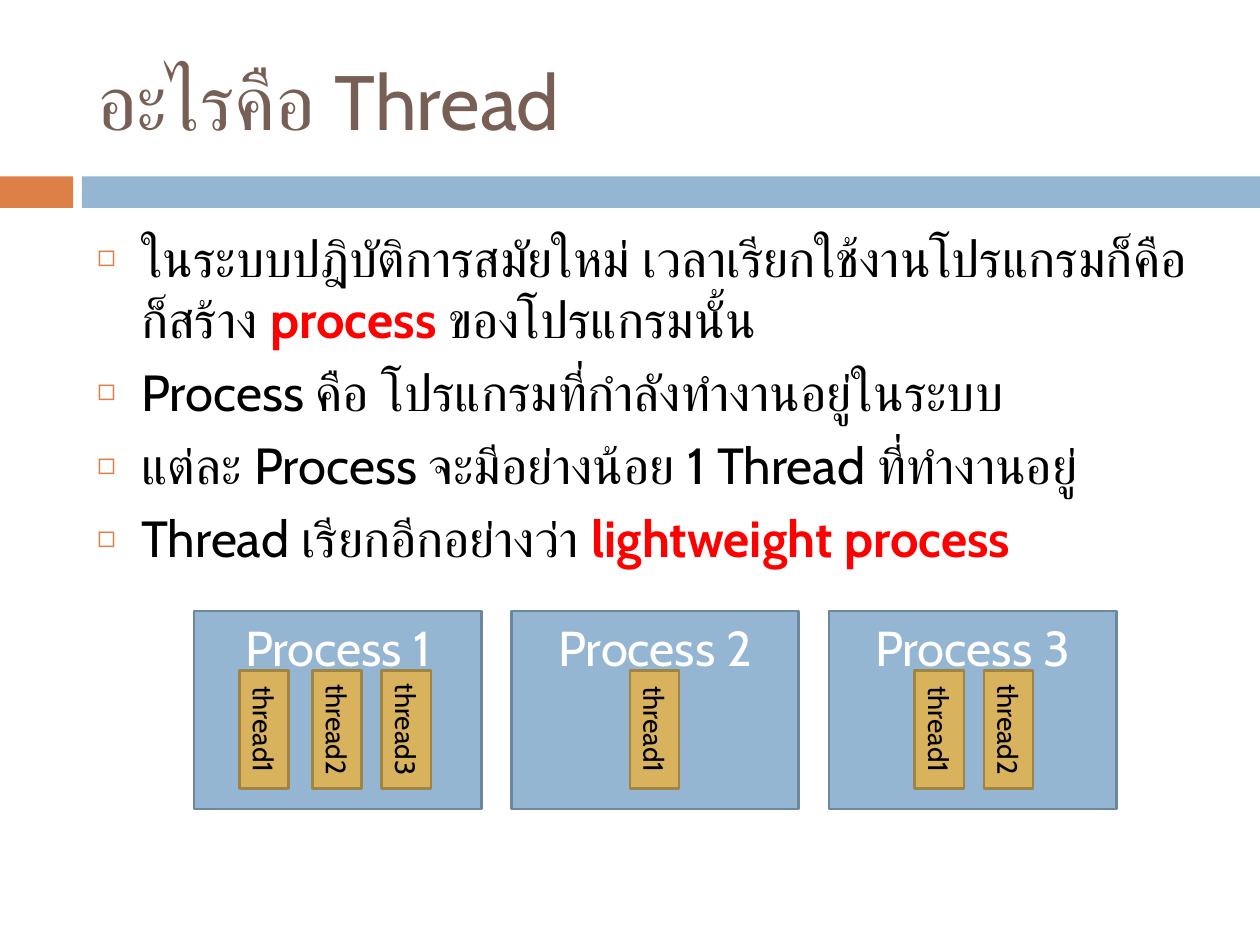
from dataclasses import dataclass

from lxml.etree import SubElement
from pptx import Presentation
from pptx.dml.color import RGBColor
from pptx.enum.shapes import MSO_SHAPE
from pptx.enum.text import MSO_ANCHOR, MSO_AUTO_SIZE, PP_ALIGN
from pptx.oxml.ns import qn
from pptx.util import Inches, Pt


@dataclass(frozen=True)
class Theme:
    """Colours, type sizes and the font of the slide."""

    font: str = "Cabin"
    title: str = "775F55"
    text: str = "000000"
    emphasis: str = "FF0000"
    light: str = "FFFFFF"
    accent: str = "DD8047"
    process: str = "94B6D2"
    process_line: str = "6D879B"
    thread: str = "D8B25C"
    thread_line: str = "A08444"
    title_size: int = 44
    body_size: int = 29
    process_size: int = 28
    thread_size: int = 16


class SlideBuilder:
    """Draws styled elements on the current slide."""

    def __init__(self, slide, theme):
        self.slide = slide
        self.theme = theme

    def style(self, span, size, color, bold=False):
        span.font.name = self.theme.font
        span.font.size = Pt(size)
        span.font.bold = bold
        span.font.color.rgb = RGBColor.from_string(color)

    def place(self, box, left, top, width, height):
        box.left, box.top = Inches(left), Inches(top)
        box.width, box.height = Inches(width), Inches(height)

    def title(self, text, *area):
        box = self.slide.shapes.title
        self.place(box, *area)
        frame = box.text_frame
        frame.text = text
        frame.auto_size = MSO_AUTO_SIZE.NONE
        frame.vertical_anchor = MSO_ANCHOR.MIDDLE
        para = frame.paragraphs[0]
        para.alignment = PP_ALIGN.LEFT
        self.style(para.runs[0], self.theme.title_size, self.theme.title)

    def bullet(self, para):
        para.space_before = Pt(7)
        properties = para._p.get_or_add_pPr()
        properties.set("marL", str(Inches(0.35)))
        properties.set("indent", str(Inches(-0.35)))
        color = SubElement(properties, qn("a:buClr"))
        SubElement(color, qn("a:srgbClr"), val=self.theme.accent)
        SubElement(properties, qn("a:buSzPct"), val="60000")
        SubElement(properties, qn("a:buChar"), char="◻")

    def body(self, items, *area):
        box = self.slide.placeholders[1]
        self.place(box, *area)
        frame = box.text_frame
        frame.text = "\n".join("" for _ in items)
        frame.auto_size = MSO_AUTO_SIZE.NONE
        for para, spans in zip(frame.paragraphs, items):
            self.bullet(para)
            for text, strong in spans:
                span = para.add_run()
                span.text = text
                color = self.theme.emphasis if strong else self.theme.text
                self.style(span, self.theme.body_size, color, strong)

    def rectangle(self, fill, line, *area):
        box = self.slide.shapes.add_shape(MSO_SHAPE.RECTANGLE, *map(Inches, area))
        box.shadow.inherit = False
        box.fill.solid()
        box.fill.fore_color.rgb = RGBColor.from_string(fill)
        if line:
            box.line.color.rgb = RGBColor.from_string(line)
            box.line.width = Pt(1.5)
        else:
            box.line.fill.background()
        return box

    def label(self, box, text, size, color, anchor):
        frame = box.text_frame
        frame.text = text
        frame.word_wrap = True
        frame.vertical_anchor = anchor
        para = frame.paragraphs[0]
        para.alignment = PP_ALIGN.CENTER
        self.style(para.runs[0], size, color)

    def process(self, text, *area):
        theme = self.theme
        box = self.rectangle(theme.process, theme.process_line, *area)
        self.label(box, text, theme.process_size, theme.light, MSO_ANCHOR.TOP)

    def thread(self, text, *area):
        theme = self.theme
        box = self.rectangle(theme.thread, theme.thread_line, *area)
        self.label(box, text, theme.thread_size, theme.text, MSO_ANCHOR.MIDDLE)
        box.text_frame._txBody.bodyPr.set("vert", "vert")


BULLETS = [
    [
        ("ในระบบปฎิบัติการสมัยใหม่ เวลาเรียกใช้งานโปรแกรมก็คือก็สร้าง ", False),
        ("process ", True),
        ("ของโปรแกรมนั้น", False),
    ],
    [("Process คือ โปรแกรมที่กำลังทำงานอยู่ในระบบ", False)],
    [("แต่ละ Process จะมีอย่างน้อย 1 Thread ที่ทำงานอยู่", False)],
    [("Thread เรียกอีกอย่างว่า ", False), ("lightweight process", True)],
]
THREAD_LEFTS = [[1.9, 2.48, 3.03], [5], [7.26, 7.81]]


def main():
    deck = Presentation()
    deck.slide_width, deck.slide_height = Inches(10), Inches(7.5)
    theme = Theme()
    builder = SlideBuilder(deck.slides.add_slide(deck.slide_layouts[1]), theme)

    builder.rectangle(theme.accent, None, 0, 1.4, 0.58, 0.25)
    builder.rectangle(theme.process, None, 0.65, 1.4, 9.35, 0.25)
    builder.title("อะไรคือ Thread", 0.67, 0.25, 8.92, 1.08)
    builder.body(BULLETS, 0.67, 1.75, 8.92, 5.52)

    for index, lefts in enumerate(THREAD_LEFTS):
        builder.process(f"Process {index + 1}", 1.54 + index * 2.52, 4.85, 2.28, 1.57)
        for number, left in enumerate(lefts, 1):
            builder.thread(f"thread{number}", left, 5.32, 0.39, 0.94)

    deck.save("out.pptx")


if __name__ == "__main__":
    main()
